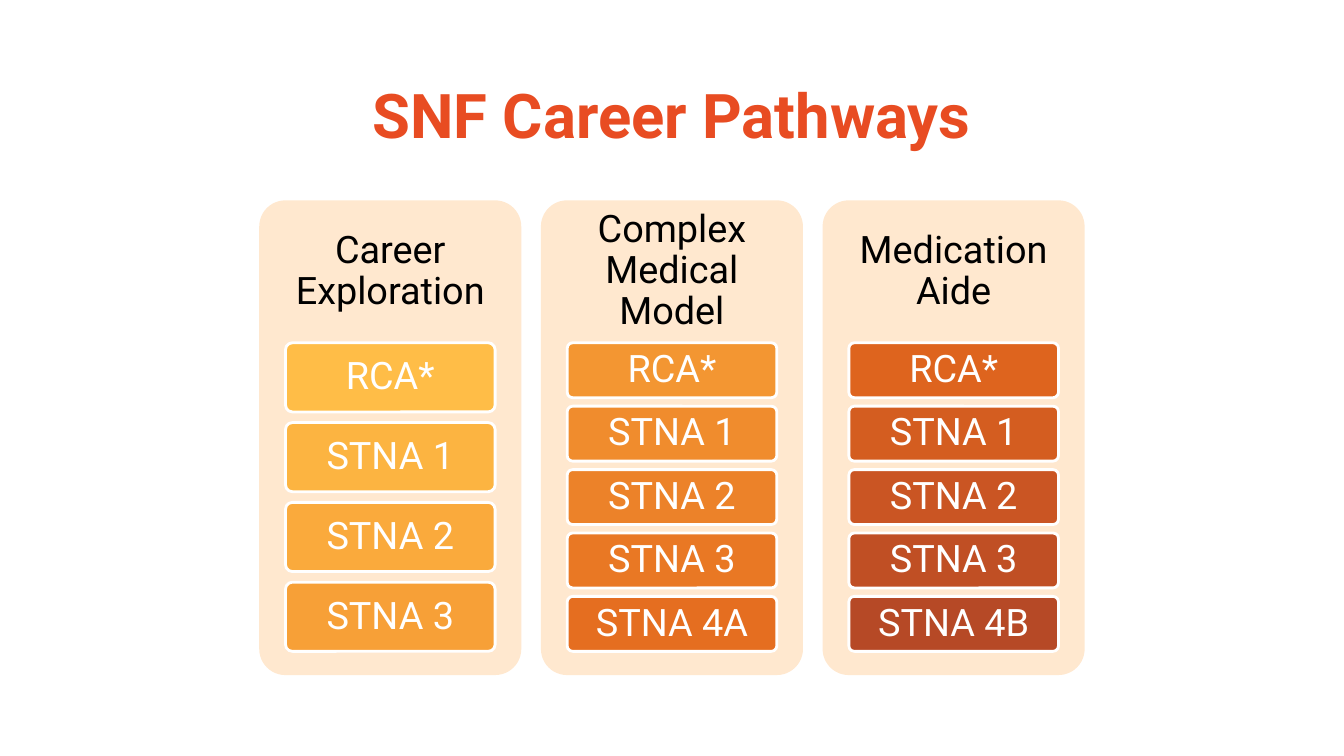
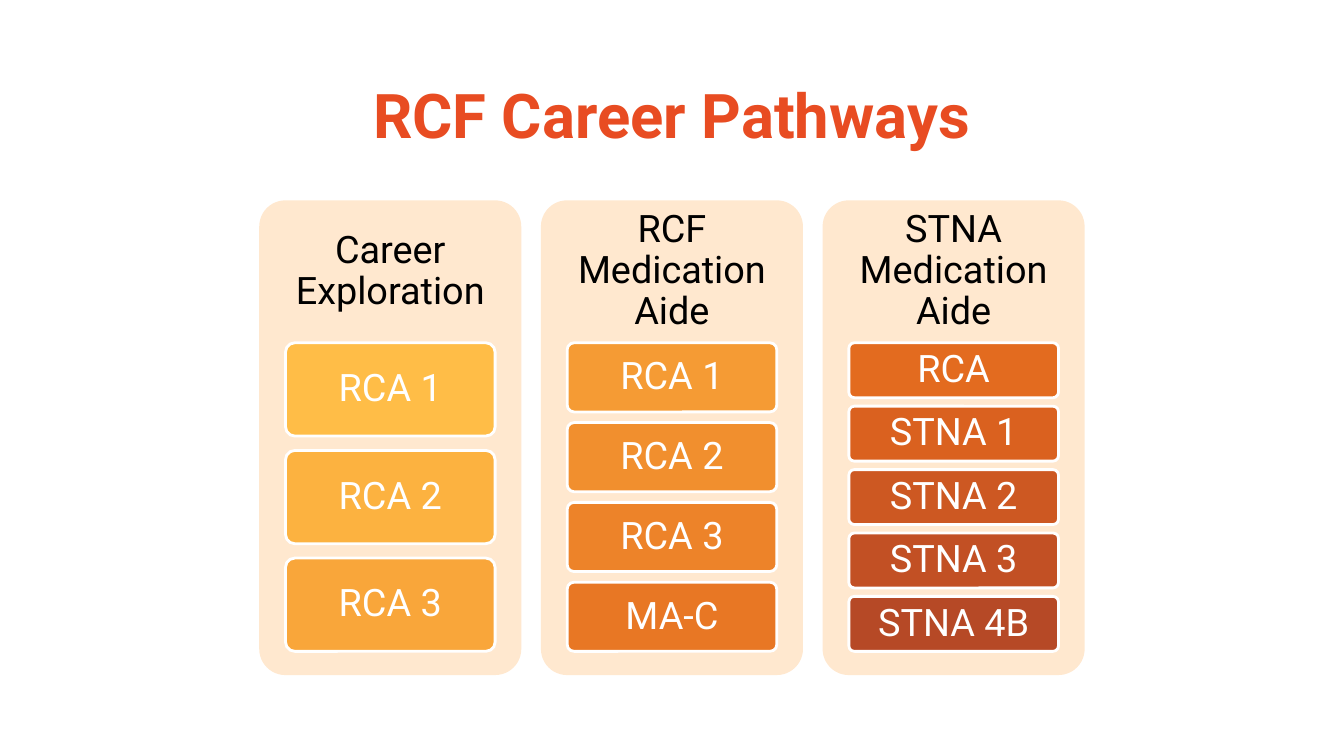
from pptx import Presentation
from pptx.dml.color import RGBColor
from pptx.enum.shapes import MSO_SHAPE
from pptx.enum.text import MSO_ANCHOR, PP_ALIGN
from pptx.util import Pt

ROUNDED = MSO_SHAPE.ROUNDED_RECTANGLE
MIDDLE = MSO_ANCHOR.MIDDLE
CENTER = PP_ALIGN.CENTER

FONT = "Roboto"
TITLE_COLOR = "E84C22"
PANEL_COLOR = "FFE8CF"
BLACK = "000000"
WHITE = "FFFFFF"

SLIDE_WIDTH, SLIDE_HEIGHT = 960, 540
TITLE_BOX = (48, 36, 864, 90)
PATHWAYS_BOX = (185.2, 143.1, 589.6, 339.1)
COLUMN_GAP = 14
HEADING_SHARE, STEPS_SHARE, STEP_INDENT = 0.3, 0.65, 0.1
STEP_GAP = 2 / 13  # gap between steps, relative to step height

# Each slide: title and columns; each column: heading and (step, colour) pairs
SLIDES = [
    ("SNF Career Pathways", [
        ("Career Exploration", [
            ("RCA*", "FFBD47"), ("STNA 1", "FCB441"),
            ("STNA 2", "FAAA3C"), ("STNA 3", "F7A037")]),
        ("Complex Medical Model", [
            ("RCA*", "F39632"), ("STNA 1", "F08C2D"), ("STNA 2", "EC8229"),
            ("STNA 3", "E97824"), ("STNA 4A", "E56E20")]),
        ("Medication Aide", [
            ("RCA*", "DE641E"), ("STNA 1", "D45D20"), ("STNA 2", "CA5523"),
            ("STNA 3", "C04F24"), ("STNA 4B", "B64926")]),
    ]),
    ("RCF Career Pathways", [
        ("Career Exploration", [
            ("RCA 1", "FFBD47"), ("RCA 2", "FCB240"), ("RCA 3", "F9A63A")]),
        ("RCF Medication Aide", [
            ("RCA 1", "F59B34"), ("RCA 2", "F18F2E"),
            ("RCA 3", "ED8329"), ("MA-C", "E87724")]),
        ("STNA Medication Aide", [
            ("RCA", "E36B1F"), ("STNA 1", "DA611F"), ("STNA 2", "CD5822"),
            ("STNA 3", "C25024"), ("STNA 4B", "B64926")]),
    ]),
]


def rgb(color):
    return RGBColor.from_string(color)


def place(shape, box):
    shape.left, shape.top, shape.width, shape.height = map(Pt, box)


def write(shape, text, size, color, bold=False, line_spacing=None):
    frame = shape.text_frame
    frame.word_wrap = True
    frame.vertical_anchor = MIDDLE
    para = frame.paragraphs[0]
    para.text = text
    para.alignment = CENTER
    para.line_spacing = line_spacing
    para.font.name = FONT
    para.font.size = Pt(size)
    para.font.bold = bold
    para.font.color.rgb = rgb(color)


def add_card(slide, box, text, fill, color, bottom_inset=0):
    card = slide.shapes.add_shape(ROUNDED, *map(Pt, box))
    card.adjustments[0] = 0.1
    card.shadow.inherit = False
    card.fill.solid()
    card.fill.fore_color.rgb = rgb(fill)
    card.line.fill.background()
    write(card, text, 27, color, line_spacing=0.9)
    frame = card.text_frame
    frame.margin_left = frame.margin_right = Pt(5)
    frame.margin_top = 0
    frame.margin_bottom = Pt(bottom_inset)
    return card


def add_column(slide, box, heading, steps):
    left, top, width, height = box
    add_card(slide, box, heading, PANEL_COLOR, BLACK,
             bottom_inset=height * (1 - HEADING_SHARE))
    count = len(steps)
    step_height = height * STEPS_SHARE / (count + (count - 1) * STEP_GAP)
    step_left = left + width * STEP_INDENT
    step_width = width * (1 - 2 * STEP_INDENT)
    first_top = top + height * HEADING_SHARE
    for index, (label, color) in enumerate(steps):
        step_top = first_top + index * step_height * (1 + STEP_GAP)
        step = add_card(slide, (step_left, step_top, step_width, step_height),
                        label, color, WHITE)
        step.line.color.rgb = rgb(WHITE)
        step.line.width = Pt(2)


def add_pathways(slide, box, columns):
    left, top, width, height = box
    column_width = (width + COLUMN_GAP) / len(columns) - COLUMN_GAP
    for index, (heading, steps) in enumerate(columns):
        column_left = left + index * (column_width + COLUMN_GAP)
        add_column(slide, (column_left, top, column_width, height), heading, steps)


def add_pathways_slide(deck, title, columns):
    slide = deck.slides.add_slide(deck.slide_layouts[5])
    place(slide.shapes.title, TITLE_BOX)
    write(slide.shapes.title, title, 44, TITLE_COLOR, bold=True)
    add_pathways(slide, PATHWAYS_BOX, columns)


def main():
    deck = Presentation()
    deck.slide_width, deck.slide_height = Pt(SLIDE_WIDTH), Pt(SLIDE_HEIGHT)
    for title, columns in SLIDES:
        add_pathways_slide(deck, title, columns)
    deck.save("out.pptx")


if __name__ == "__main__":
    main()
